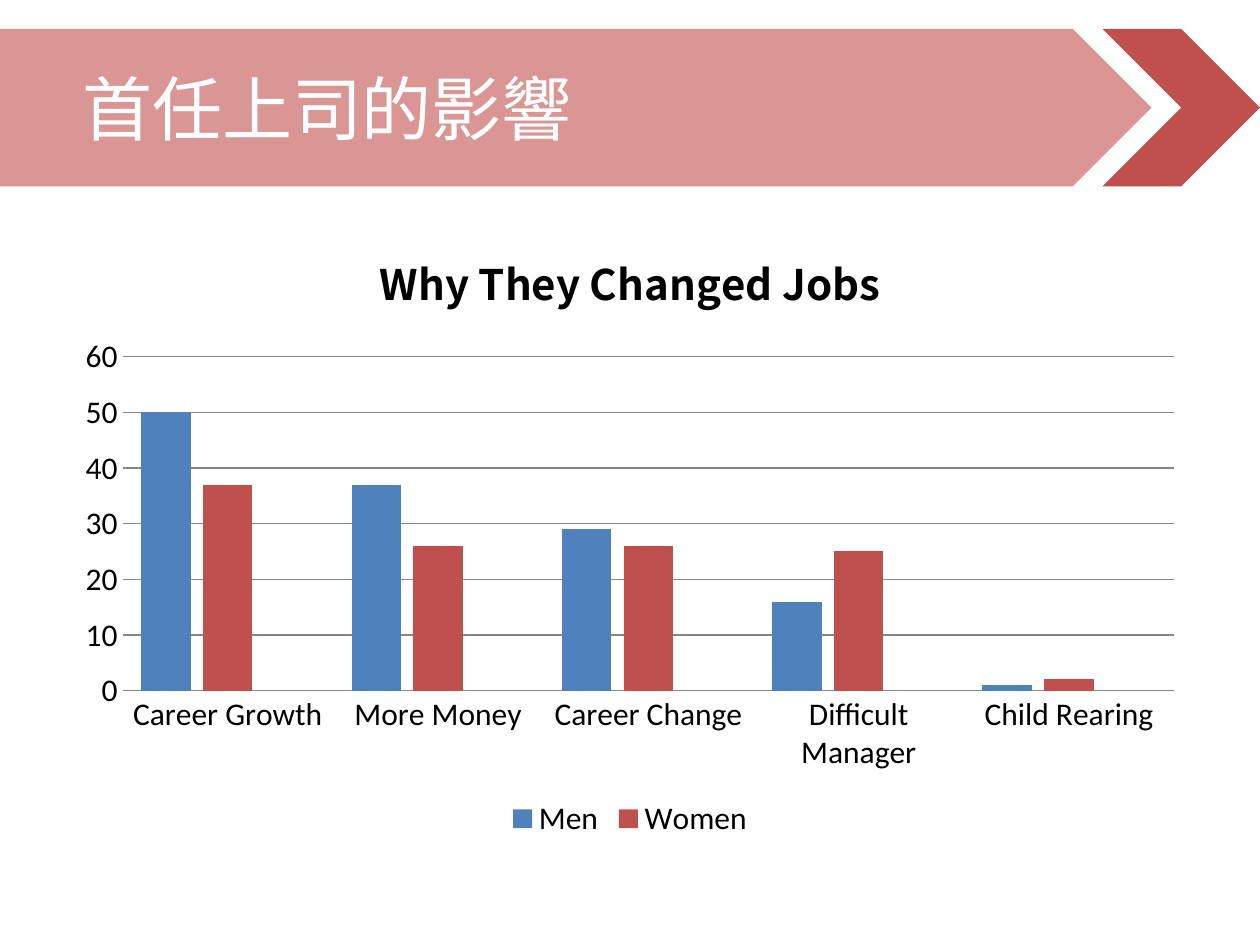
from lxml import etree
from pptx import Presentation
from pptx.chart.data import CategoryChartData
from pptx.dml.color import RGBColor
from pptx.enum import chart as ch, shapes, text
from pptx.oxml.ns import qn
from pptx.util import Pt

BLUE = RGBColor(0x4F, 0x81, 0xBD)
RED = RGBColor(0xC0, 0x50, 0x4D)
GREEN = RGBColor(0x9B, 0xBB, 0x59)
GREY = RGBColor(0x86, 0x86, 0x86)
BLACK = RGBColor(0, 0, 0)
WHITE = RGBColor(255, 255, 255)
LATIN, CJK = "Calibri", "Noto Sans CJK SC"

TOP, HIGH = 16.5, 90  # header band
CATS = ["Career Growth", "More Money", "Career Change",
        "Difficult Manager", "Child Rearing"]
SERIES = [
    ("Men", [50, 37, 29, 16, 1], BLUE),
    ("Women", [37, 26, 26, 25, 2], RED),
    ("Series 3", [None] * 5, GREEN),  # empty, keeps a free slot per group
]


def style(obj, **vals):
    """Set each named attribute on the object."""
    for name, val in vals.items():
        setattr(obj, name, val)


def font(obj, size, color, face, bold=False):
    style(obj, size=Pt(size), name=face, bold=bold)
    obj.color.rgb = color


def arrow(slide, kind, left, width, alpha=100):
    """Add a flat red header arrow, alpha in percent."""
    shape = slide.shapes.add_shape(kind, Pt(left), Pt(TOP), Pt(width), Pt(HIGH))
    shape.shadow.inherit = False
    shape.fill.solid()
    shape.fill.fore_color.rgb = RED
    shape.line.fill.background()
    if alpha < 100:
        tone = shape._element.spPr.find(".//" + qn("a:srgbClr"))
        etree.SubElement(tone, qn("a:alpha")).set("val", str(alpha * 1000))


def heading(slide, words):
    """Place the title placeholder on top of the header band."""
    title = slide.shapes.title
    style(title, left=Pt(47), top=Pt(TOP), width=Pt(560), height=Pt(HIGH))
    frame = title.text_frame
    style(frame, text=words, margin_left=0, word_wrap=True,
          vertical_anchor=text.MSO_ANCHOR.MIDDLE)
    para = frame.paragraphs[0]
    para.alignment = text.PP_ALIGN.LEFT
    run = para.runs[0]
    font(run.font, 40, WHITE, CJK)
    etree.SubElement(run.font._element, qn("a:ea")).set("typeface", CJK)
    slide.shapes._spTree.append(title._element)  # bring to front


def hide_key(legend, index):
    """Drop one series from the legend."""
    entry = etree.Element(qn("c:legendEntry"))
    etree.SubElement(entry, qn("c:idx")).set("val", str(index))
    etree.SubElement(entry, qn("c:delete")).set("val", "1")
    legend._element.find(qn("c:legendPos")).addnext(entry)


def columns(slide):
    data = CategoryChartData()
    data.categories = CATS
    for name, vals, _ in SERIES:
        data.add_series(name, vals)
    chart = slide.shapes.add_chart(
        ch.XL_CHART_TYPE.COLUMN_CLUSTERED,
        Pt(36), Pt(126), Pt(648), Pt(356.4), data).chart
    font(chart.font, 18, BLACK, LATIN)

    # Chart title
    frame = chart.chart_title.text_frame
    frame.text = "Why They Changed Jobs"
    font(frame.paragraphs[0].runs[0].font, 24, BLACK, CJK, True)

    # Columns
    plot = chart.plots[0]
    style(plot, gap_width=75, overlap=-25, vary_by_categories=False)
    for row, (_, _, color) in zip(plot.series, SERIES):
        row.invert_if_negative = False
        row.format.fill.solid()
        row.format.fill.fore_color.rgb = color

    # Axes
    cat, val = chart.category_axis, chart.value_axis
    for axis in (cat, val):
        style(axis, major_tick_mark=ch.XL_TICK_MARK.NONE,
              minor_tick_mark=ch.XL_TICK_MARK.NONE)
    style(val, minimum_scale=0, maximum_scale=60, major_unit=10,
          has_major_gridlines=True)
    val.format.line.fill.background()
    for line in (cat.format.line, val.major_gridlines.format.line):
        line.color.rgb = GREY
        line.width = Pt(0.75)

    # Legend
    chart.has_legend = True
    style(chart.legend, position=ch.XL_LEGEND_POSITION.BOTTOM,
          include_in_layout=False)
    hide_key(chart.legend, 2)


def main():
    deck = Presentation()
    style(deck, slide_width=Pt(720), slide_height=Pt(540))
    slide = deck.slides.add_slide(deck.slide_layouts[5])
    columns(slide)
    arrow(slide, shapes.MSO_SHAPE.PENTAGON, 0, 658, alpha=60)
    arrow(slide, shapes.MSO_SHAPE.CHEVRON, 630, 90)
    heading(slide, "首任上司的影響")
    deck.save("out.pptx")


if __name__ == "__main__":
    main()
